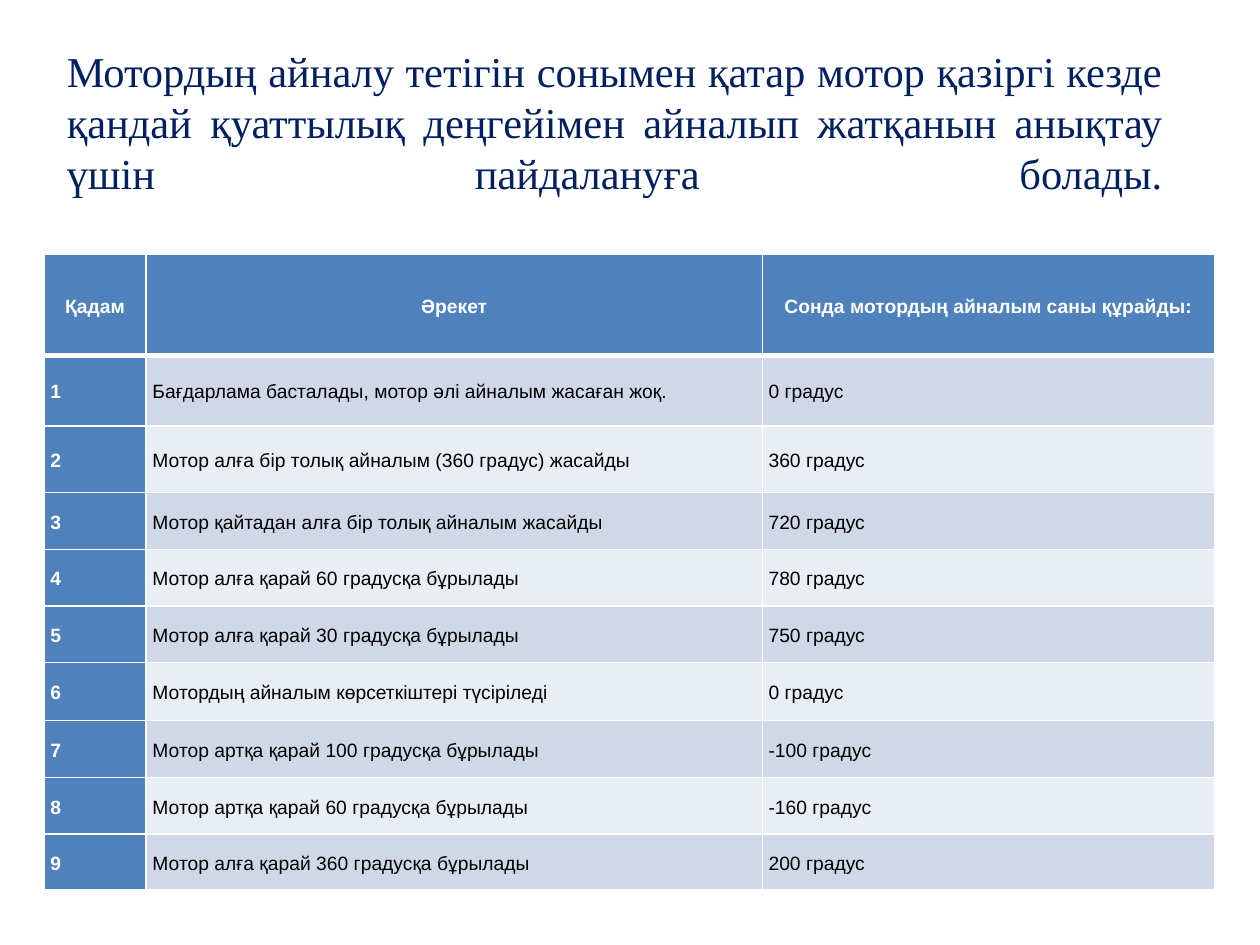
import pptx
import pptx.util
import pptx.dml.color
import pptx.enum.text
import pptx.oxml
import pptx.oxml.ns

Inches = pptx.util.Inches
Pt = pptx.util.Pt
RGBColor = pptx.dml.color.RGBColor
Align = pptx.enum.text.PP_ALIGN
Anchor = pptx.enum.text.MSO_ANCHOR

NAVY = RGBColor(0x00, 0x20, 0x60)
BLUE = RGBColor(0x4F, 0x81, 0xBD)
BANDS = (RGBColor(0xD0, 0xD8, 0xE8), RGBColor(0xE9, 0xED, 0xF4))
WHITE = RGBColor(0xFF, 0xFF, 0xFF)
BLACK = RGBColor(0x00, 0x00, 0x00)

HEADLINE = (
    "Мотордың айналу тетігін сонымен қатар мотор қазіргі кезде қандай "
    "қуаттылық деңгейімен айналып жатқанын анықтау үшін пайдалануға болады.\v"
)
HEADINGS = ("Қадам", "Әрекет", "Сонда мотордың айналым саны құрайды:")
STEPS = [
    ("Бағдарлама басталады, мотор әлі айналым жасаған жоқ.", 0),
    ("Мотор алға бір толық айналым (360 градус) жасайды", 360),
    ("Мотор қайтадан алға бір толық айналым жасайды", 720),
    ("Мотор алға қарай 60 градусқа бұрылады", 780),
    ("Мотор алға қарай 30 градусқа бұрылады", 750),
    ("Мотордың айналым көрсеткіштері түсіріледі", 0),
    ("Мотор артқа қарай 100 градусқа бұрылады", -100),
    ("Мотор артқа қарай 60 градусқа бұрылады", -160),
    ("Мотор алға қарай 360 градусқа бұрылады", 200),
]
COLUMN_WIDTHS = (0.81, 4.89, 3.59)
ROW_HEIGHTS = (0.8, 0.56, 0.53, 0.45, 0.45, 0.45, 0.46, 0.45, 0.45, 0.44)


def add_borders(cell, is_heading):
    properties = cell._tc.get_or_add_tcPr()
    widths = {"lnL": 1, "lnR": 1, "lnT": 1, "lnB": 3 if is_heading else 1}
    for position, (side, width) in enumerate(widths.items()):
        border = pptx.oxml.parse_xml(
            f'<a:{side} {pptx.oxml.ns.nsdecls("a")} w="{Pt(width)}">'
            f'<a:solidFill><a:srgbClr val="{WHITE}"/></a:solidFill></a:{side}>'
        )
        properties.insert(position, border)


def format_cell(cell, text, row, column):
    is_heading = row == 0
    is_label = is_heading or column == 0
    cell.margin_left = cell.margin_right = Inches(0.01)
    cell.margin_top = cell.margin_bottom = 0
    cell.vertical_anchor = Anchor.MIDDLE
    cell.fill.solid()
    cell.fill.fore_color.rgb = BLUE if is_label else BANDS[(row - 1) % 2]
    add_borders(cell, is_heading)

    cell.text_frame.text = text
    paragraph = cell.text_frame.paragraphs[0]
    paragraph.alignment = Align.CENTER if is_heading else Align.LEFT
    paragraph.line_spacing = 1.15
    paragraph.space_after = Pt(10)
    if not is_heading:
        paragraph._p.get_or_add_pPr().set("marL", str(Inches(0.04)))
    font = paragraph.runs[0].font
    font.name = "Arial"
    font.size = Pt(11)
    font.bold = is_label
    font.color.rgb = WHITE if is_label else BLACK


def add_headline(slide):
    headline = slide.shapes.title
    headline.left, headline.top = Inches(0.43), Inches(0.31)
    headline.width, headline.height = Inches(8.9), Inches(1.7)
    frame = headline.text_frame
    frame.text = HEADLINE
    frame.word_wrap = True
    frame.auto_size = pptx.enum.text.MSO_AUTO_SIZE.NONE
    frame.vertical_anchor = Anchor.TOP
    paragraph = frame.paragraphs[0]
    paragraph.alignment = Align.JUSTIFY
    paragraph.line_spacing = Pt(29)
    font = paragraph.runs[0].font
    font.name = "Times New Roman"
    font.size = Pt(24.3)
    font.bold = False
    font.color.rgb = NAVY


def add_steps(slide):
    rows = [HEADINGS] + [
        (str(number), action, f"{degrees} градус")
        for number, (action, degrees) in enumerate(STEPS, 1)
    ]
    table = slide.shapes.add_table(
        len(rows), len(HEADINGS), Inches(0.35), Inches(2.02),
        Inches(sum(COLUMN_WIDTHS)), Inches(sum(ROW_HEIGHTS)),
    ).table
    for column, width in zip(table.columns, COLUMN_WIDTHS):
        column.width = Inches(width)
    for row, height in zip(table.rows, ROW_HEIGHTS):
        row.height = Inches(height)
    for row, texts in enumerate(rows):
        for column, text in enumerate(texts):
            format_cell(table.cell(row, column), text, row, column)


def main():
    presentation = pptx.Presentation()
    presentation.slide_width = Inches(10)
    presentation.slide_height = Inches(7.5)
    slide = presentation.slides.add_slide(presentation.slide_layouts[5])
    add_headline(slide)
    add_steps(slide)
    presentation.save("out.pptx")


if __name__ == "__main__":
    main()
